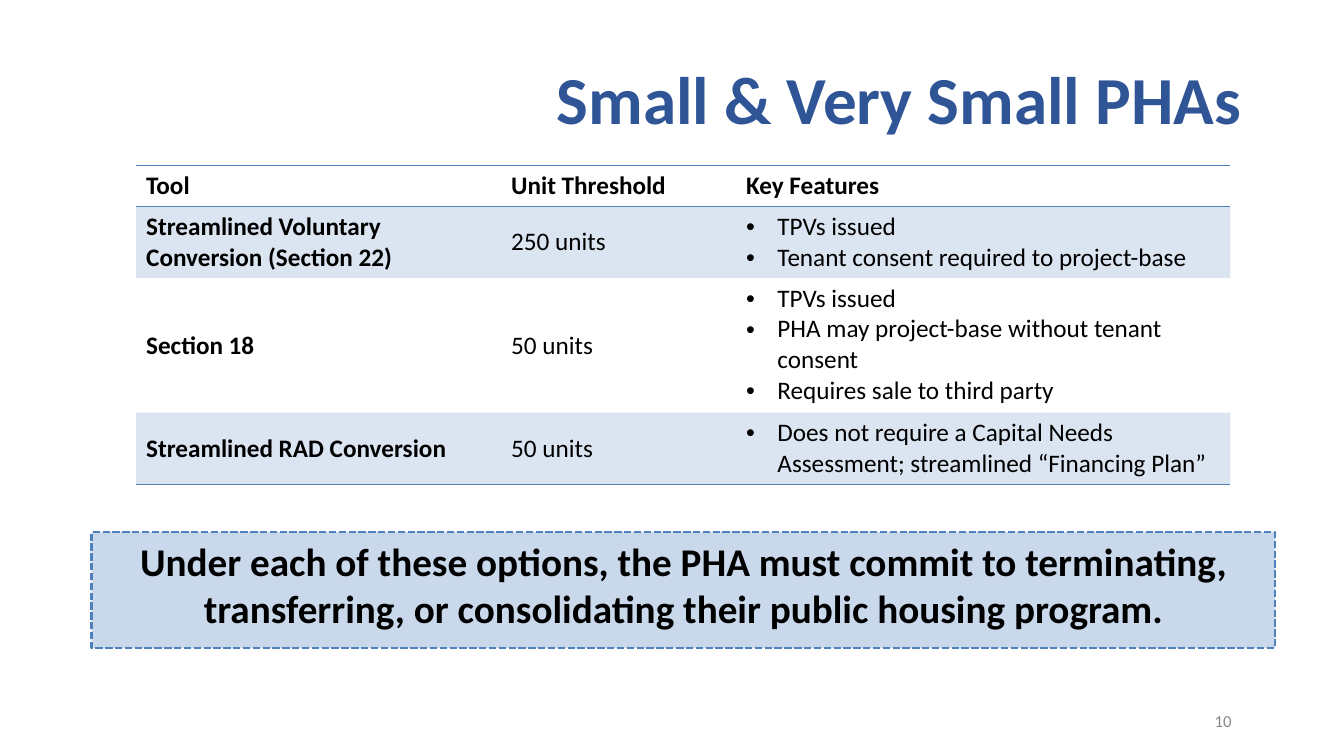
from lxml.etree import SubElement
from pptx import Presentation
from pptx.dml.color import RGBColor
from pptx.enum.dml import MSO_LINE
from pptx.enum.shapes import MSO_SHAPE
from pptx.enum.text import MSO_ANCHOR, MSO_AUTO_SIZE, PP_ALIGN
from pptx.oxml.ns import qn
from pptx.util import Cm, Pt

BLACK = RGBColor(0x00, 0x00, 0x00)
GRAY = RGBColor(0x89, 0x89, 0x89)
NAVY = RGBColor(0x2F, 0x55, 0x97)
BLUE = RGBColor(0x4F, 0x81, 0xBD)
PALE_BLUE = RGBColor(0x95, 0xB3, 0xD7)
NO_TABLE_STYLE = "{2D5ABB26-0587-4C30-8999-92F81FD0307C}"

COLUMN_WIDTHS = [9.2, 5.92, 12.46]
ROW_HEIGHTS = [1.03, 1.81, 3.39, 1.81]
TOOLS = [
    ["Tool", "Unit Threshold", "Key Features"],
    ["Streamlined Voluntary Conversion (Section 22)", "250 units",
     "TPVs issued\nTenant consent required to project-base"],
    ["Section 18", "50 units",
     "TPVs issued\nPHA may project-base without tenant consent\nRequires sale to third party"],
    ["Streamlined RAD Conversion", "50 units",
     "Does not require a Capital Needs Assessment; streamlined “Financing Plan”"],
]


class SlideBuilder:
    """Holds the text style and the current slide, and adds its elements."""

    font_name = "Calibri"

    def __init__(self, deck):
        self.page = deck.slides.add_slide(deck.slide_layouts[5])

    def style(self, para, size, color, bold=False, align=PP_ALIGN.LEFT):
        para.alignment = align
        for span in para.runs:
            span.font.name = self.font_name
            span.font.size = Pt(size)
            span.font.bold = bold
            span.font.color.rgb = color

    def tint(self, fill, color, percent):
        fill.solid()
        fill.fore_color.rgb = color
        shade = fill._xPr.find(qn("a:solidFill"))[0]
        SubElement(shade, qn("a:alpha"), val=str(percent * 1000))

    def title(self, text, left, top, width, height):
        box = self.page.shapes.title
        box.left, box.top, box.width, box.height = map(Cm, (left, top, width, height))
        frame = box.text_frame
        frame.text = text
        frame.auto_size = MSO_AUTO_SIZE.NONE
        frame.vertical_anchor = MSO_ANCHOR.MIDDLE
        para = frame.paragraphs[0]
        para.line_spacing = 0.9
        self.style(para, 48, NAVY, True, PP_ALIGN.RIGHT)

    def page_number(self, text, left, top, width, height):
        box = self.page.shapes.add_textbox(*map(Cm, (left, top, width, height)))
        frame = box.text_frame
        frame.word_wrap = True
        frame.vertical_anchor = MSO_ANCHOR.MIDDLE
        frame.text = text
        self.style(frame.paragraphs[0], 12, GRAY, align=PP_ALIGN.RIGHT)

    def callout(self, text, left, top, width, height):
        box = self.page.shapes.add_shape(
            MSO_SHAPE.RECTANGLE, *map(Cm, (left, top, width, height)))
        box.shadow.inherit = False
        self.tint(box.fill, PALE_BLUE, 50)
        box.line.color.rgb = BLUE
        box.line.width = Pt(1.75)
        box.line.dash_style = MSO_LINE.SQUARE_DOT
        frame = box.text_frame
        frame.word_wrap = True
        frame.vertical_anchor = MSO_ANCHOR.TOP
        frame.text = text
        self.style(frame.paragraphs[0], 28, BLACK, True, PP_ALIGN.CENTER)

    def border(self, cell, side):
        line = SubElement(cell._tc.get_or_add_tcPr(), qn(f"a:ln{side}"), w=str(Pt(1)))
        solid = SubElement(line, qn("a:solidFill"))
        SubElement(solid, qn("a:srgbClr"), val=str(BLUE))

    def bullet(self, para):
        properties = para._p.get_or_add_pPr()
        properties.set("marL", str(Cm(0.79)))
        properties.set("indent", str(Cm(-0.79)))
        SubElement(properties, qn("a:buFont"), typeface="Arial")
        SubElement(properties, qn("a:buChar"), char="•")

    def table(self, rows, left, top, widths, heights):
        frame = self.page.shapes.add_table(
            len(rows), len(widths), Cm(left), Cm(top), Cm(sum(widths)), Cm(sum(heights)))
        grid = frame.table
        grid._tbl.tblPr.find(qn("a:tableStyleId")).text = NO_TABLE_STYLE
        for column, width in zip(grid.columns, widths):
            column.width = Cm(width)
        for row, height in zip(grid.rows, heights):
            row.height = Cm(height)
        last = len(rows) - 1
        for r, texts in enumerate(rows):
            for c, text in enumerate(texts):
                cell = grid.cell(r, c)
                cell.text = text
                if r == 0:
                    self.border(cell, "T")
                if r in (0, last):
                    self.border(cell, "B")
                if r % 2:
                    self.tint(cell.fill, BLUE, 20)
                else:
                    cell.fill.background()
                is_feature = r > 0 and c == 2
                if r > 0 and not is_feature:
                    cell.vertical_anchor = MSO_ANCHOR.MIDDLE
                for para in cell.text_frame.paragraphs:
                    if is_feature:
                        self.bullet(para)
                    self.style(para, 18, BLACK, r == 0 or c == 0)


def main():
    deck = Presentation()
    deck.slide_width, deck.slide_height = Cm(33.87), Cm(19.05)
    builder = SlideBuilder(deck)
    builder.title("Small & Very Small PHAs", 2.34, 0.74, 29.21, 3.68)
    builder.callout(
        "Under each of these options, the PHA must commit to terminating, "
        "transferring, or consolidating their public housing program.",
        2.31, 13.41, 29.82, 2.92)
    builder.page_number("10", 24.28, 17.65, 7.01, 1.02)
    builder.table(TOOLS, 3.43, 4.17, COLUMN_WIDTHS, ROW_HEIGHTS)
    deck.save("out.pptx")


if __name__ == "__main__":
    main()
